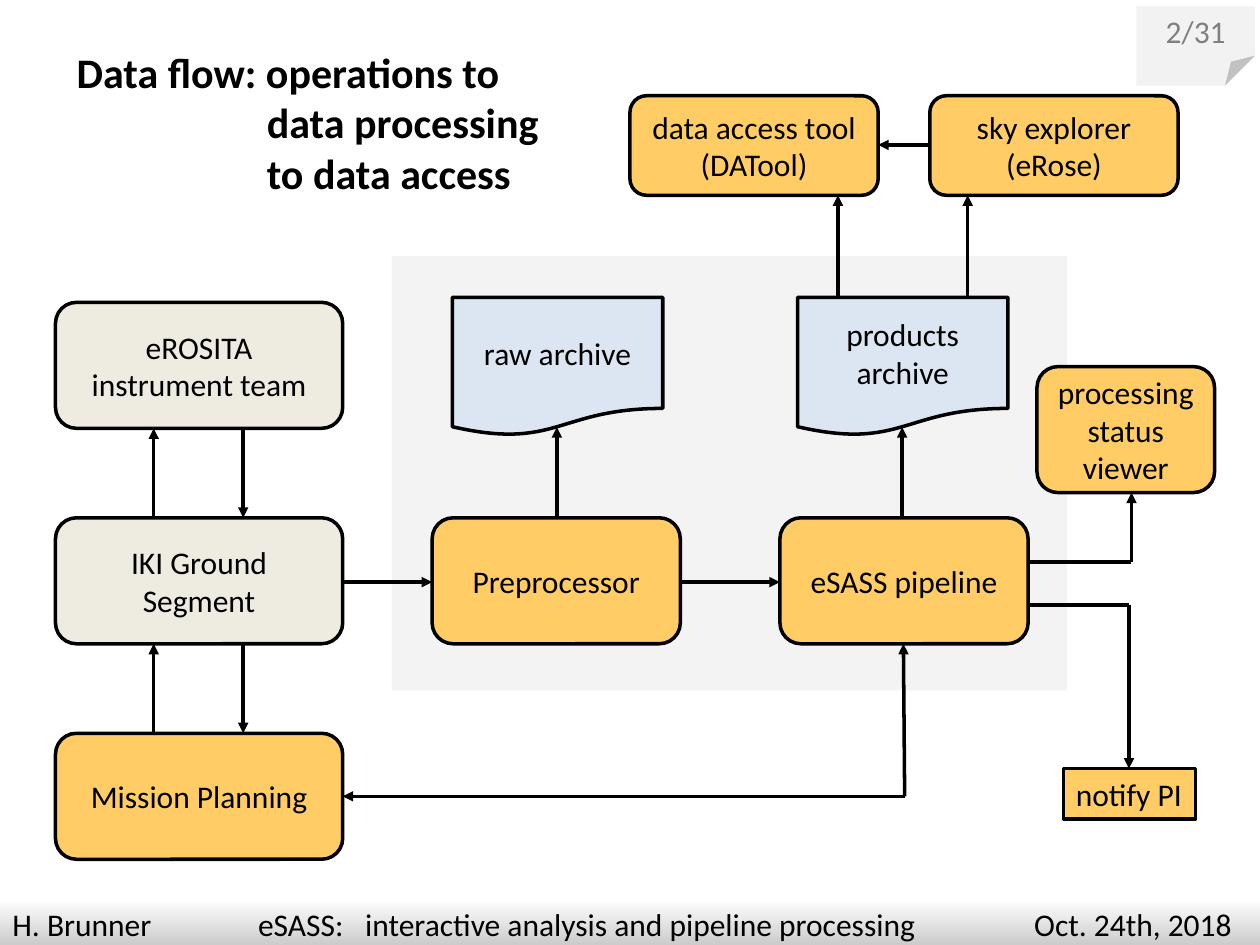
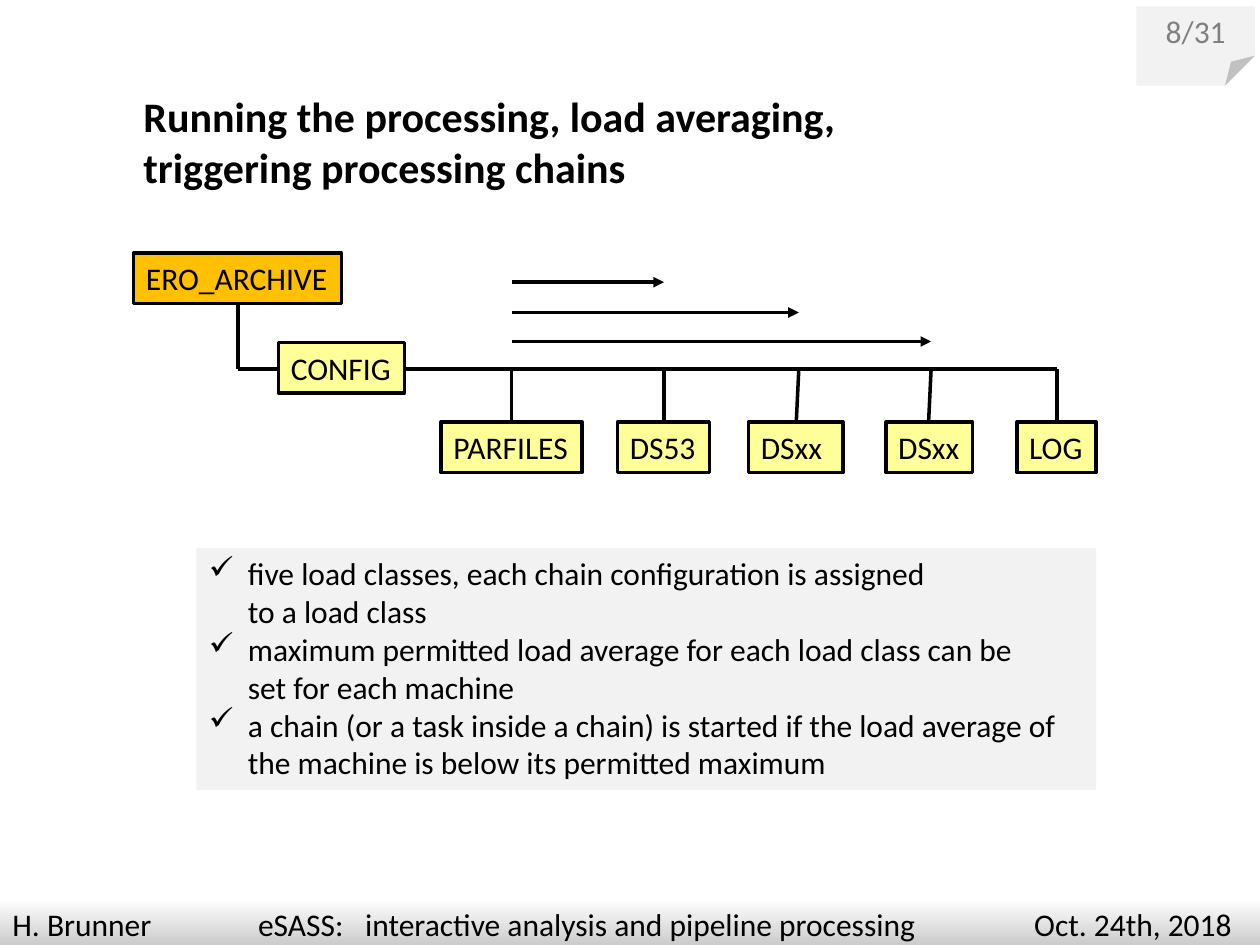
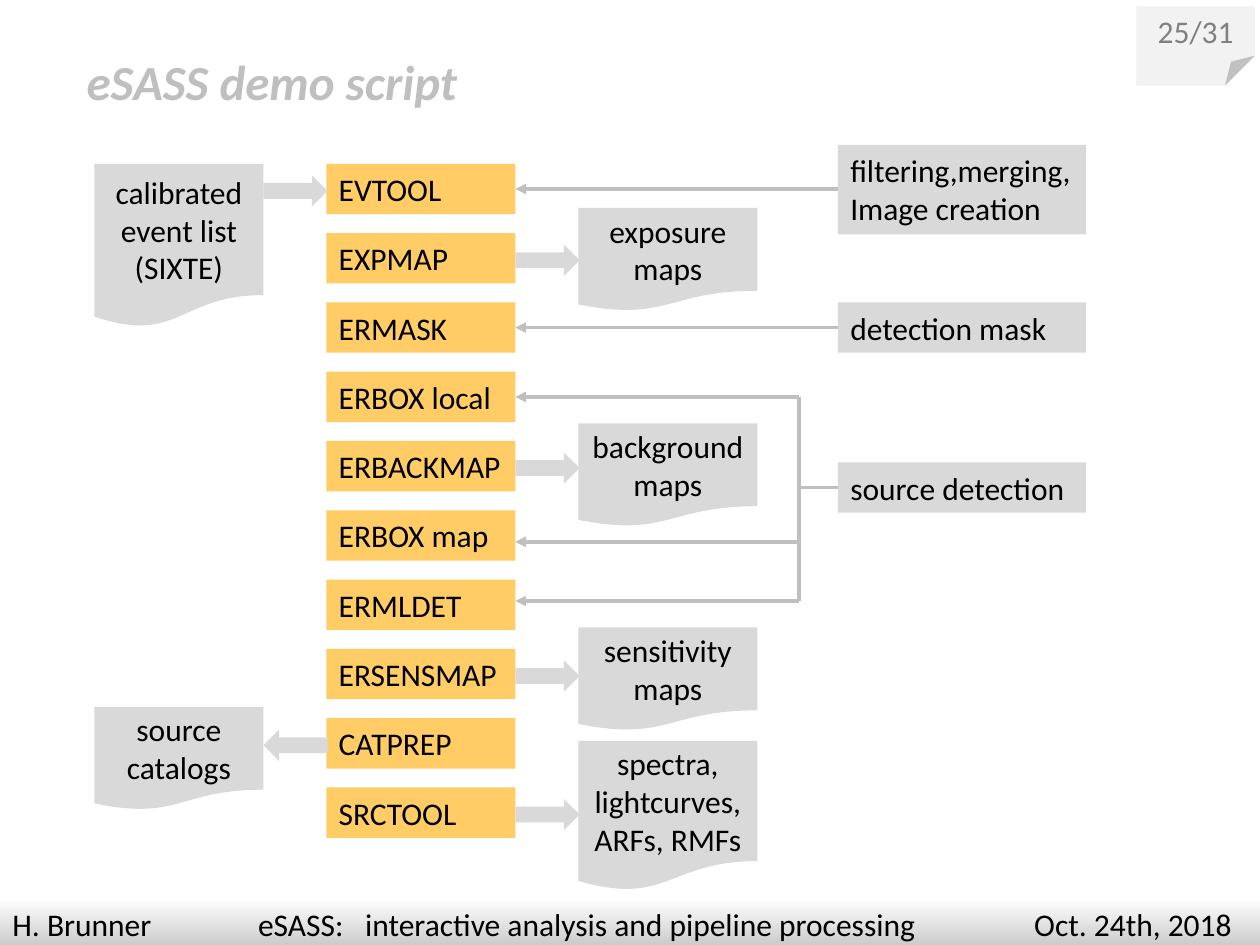
from itertools import pairwise

from lxml import etree
from pptx import Presentation
from pptx.dml.color import RGBColor
from pptx.enum.shapes import MSO_CONNECTOR, MSO_SHAPE
from pptx.enum.text import MSO_ANCHOR, MSO_AUTO_SIZE, PP_ALIGN
from pptx.oxml.ns import qn
from pptx.util import Inches, Pt

RECT = MSO_SHAPE.RECTANGLE
ROUNDED = MSO_SHAPE.ROUNDED_RECTANGLE
DOCUMENT = MSO_SHAPE.FLOWCHART_DOCUMENT
FOLDED = MSO_SHAPE.FOLDED_CORNER
RIGHT_ARROW = MSO_SHAPE.RIGHT_ARROW
LEFT_ARROW = MSO_SHAPE.LEFT_ARROW
STRAIGHT = MSO_CONNECTOR.STRAIGHT
TOP, MIDDLE = MSO_ANCHOR.TOP, MSO_ANCHOR.MIDDLE
LEFT, CENTER = PP_ALIGN.LEFT, PP_ALIGN.CENTER
FIT_SHAPE = MSO_AUTO_SIZE.SHAPE_TO_FIT_TEXT

FONT = "Calibri"
BLACK = "000000"
ORANGE = "FFCC66"
AMBER = "FFC000"
YELLOW = "FFFF99"
BEIGE = "EEECE1"
BLUE = "DCE6F2"
PALE = "F2F2F2"
LIGHT_GRAY = "D9D9D9"
GRAY = "BFBFBF"
PAGE_GRAY = "808080"
FOOTER_END = "CCCCCC"

LINE_WIDTH = Pt(2)
LABEL_HEIGHT = 0.4
FOOTER = "H. Brunner\teSASS:\tinteractive analysis and pipeline processing\tOct. 24th, 2018"
FOOTER_TABS = (1.95, 2.8, 8.11)


def rgb(color):
    return RGBColor.from_string(color)


def write(shape, text, align=LEFT, anchor=TOP, size=18, color=BLACK, bold=None, italic=None):
    """Put text into a shape, one paragraph per line."""
    frame = shape.text_frame
    frame.word_wrap = True
    frame.vertical_anchor = anchor
    frame.text = text
    for paragraph in frame.paragraphs:
        paragraph.alignment = align
        font = paragraph.font
        font.name, font.size, font.bold, font.italic = FONT, Pt(size), bold, italic
        font.color.rgb = rgb(color)
    return frame


def add_box(slide, kind, left, top, width, height, fill, outlined=False):
    shape = slide.shapes.add_shape(
        kind, Inches(left), Inches(top), Inches(width), Inches(height))
    shape.shadow.inherit = False
    shape.fill.solid()
    shape.fill.fore_color.rgb = rgb(fill)
    if outlined:
        shape.line.color.rgb = rgb(BLACK)
        shape.line.width = LINE_WIDTH
    else:
        shape.line.fill.background()
    return shape


def add_node(slide, kind, left, top, width, height, text, fill, outlined=True):
    """Add a box with centred text."""
    shape = add_box(slide, kind, left, top, width, height, fill, outlined)
    write(shape, text, CENTER, MIDDLE)


def add_label(slide, left, top, width, text, fill, outlined=False, height=LABEL_HEIGHT):
    """Add a rectangle with left-aligned text that does not wrap."""
    shape = add_box(slide, RECT, left, top, width, height, fill, outlined)
    frame = write(shape, text)
    frame.word_wrap = False
    frame.auto_size = FIT_SHAPE


def add_route(slide, *points, color=BLACK, arrow=True):
    """Join points by straight lines, with an arrowhead at the last point."""
    for start, end in pairwise(points):
        connector = slide.shapes.add_connector(
            STRAIGHT, *(Inches(value) for value in (*start, *end)))
        connector.line.color.rgb = rgb(color)
        connector.line.width = LINE_WIDTH
        properties = connector.element.spPr
        etree.SubElement(properties, qn("a:effectLst"))
        if arrow and end == points[-1]:
            etree.SubElement(properties.find(qn("a:ln")), qn("a:tailEnd"), type="triangle")


def add_title(slide, left, top, width, height, text, size=24, color=BLACK, italic=None):
    box = slide.shapes.add_textbox(
        Inches(left), Inches(top), Inches(width), Inches(height))
    frame = write(box, text, size=size, color=color, bold=True, italic=italic)
    frame.word_wrap = False
    return frame


def add_checklist(slide, left, top, width, height, items):
    panel = add_box(slide, RECT, left, top, width, height, PALE)
    for paragraph in write(panel, "\n".join(items)).paragraphs:
        properties = paragraph._p.get_or_add_pPr()
        properties.set("marL", str(Inches(0.31)))
        properties.set("indent", str(-Inches(0.31)))
        bullet = etree.Element(qn("a:buChar"), char="✓")
        properties.insert(0, bullet)


def add_page_mark(slide, number):
    mark = add_box(slide, FOLDED, 9.02, 0.05, 0.94, 0.63, PALE)
    geometry = mark.element.spPr.find(qn("a:prstGeom"))
    for child in list(geometry):
        geometry.remove(child)
    adjustments = etree.SubElement(geometry, qn("a:avLst"))
    etree.SubElement(adjustments, qn("a:gd"), name="adj", fmla="val 37700")
    write(mark, f"{number}/31", CENTER, MIDDLE, color=PAGE_GRAY)


def add_footer(slide):
    band = add_box(slide, RECT, 0, 7.13, 10, 0.37, FOOTER_END)
    band.fill.gradient()
    band.fill.gradient_angle = 270
    for stop, color in zip(band.fill.gradient_stops, ("FFFFFF", FOOTER_END)):
        stop.color.rgb = rgb(color)
    paragraph = write(band, FOOTER).paragraphs[0]
    tabs = etree.Element(qn("a:tabLst"))
    for position in FOOTER_TABS:
        etree.SubElement(tabs, qn("a:tab"), pos=str(Inches(position)), algn="l")
    paragraph._p.get_or_add_pPr().insert(0, tabs)


def add_slide(presentation, number):
    slide = presentation.slides.add_slide(presentation.slide_layouts[6])
    add_page_mark(slide, number)
    add_footer(slide)
    return slide


def build_data_flow(presentation):
    slide = add_slide(presentation, 2)
    panel = add_box(slide, RECT, 3.11, 2.03, 5.36, 3.45, PALE)
    panel_color = panel.element.spPr.find(qn("a:solidFill")).find(qn("a:srgbClr"))
    etree.SubElement(panel_color, qn("a:alpha"), val="85000")

    title = add_title(slide, 0.51, 0.32, 3.94, 1.31,
                      "Data flow: operations to\ndata processing\nto data access")
    for paragraph in title.paragraphs[1:]:
        paragraph._p.get_or_add_pPr().set("marL", str(Inches(1.51)))

    for top, text, fill in ((2.4, "eROSITA instrument team", BEIGE),
                            (4.11, "IKI Ground Segment", BEIGE),
                            (5.82, "Mission Planning", ORANGE)):
        add_node(slide, ROUNDED, 0.44, top, 2.28, 1, text, fill)
    for left, text in ((3.43, "Preprocessor"), (6.19, "eSASS pipeline")):
        add_node(slide, ROUNDED, left, 4.11, 1.97, 1, text, ORANGE)
    for left, text in ((3.59, "raw archive"), (6.33, "products archive")):
        add_node(slide, DOCUMENT, left, 2.36, 1.67, 1.1, text, BLUE)
    for left, text in ((5, "data access tool\n(DATool)"), (7.38, "sky explorer\n(eRose)")):
        add_node(slide, ROUNDED, left, 0.76, 1.97, 0.79, text, ORANGE)
    add_node(slide, ROUNDED, 8.23, 2.91, 1.41, 1, "processing status viewer", ORANGE)
    add_label(slide, 8.44, 6.1, 1.05, "notify PI", ORANGE, outlined=True)

    for upper, lower in ((3.4, 4.11), (5.11, 5.82)):
        add_route(slide, (1.22, lower), (1.22, upper))
        add_route(slide, (1.93, upper), (1.93, lower))
    for start, end in ((2.72, 3.43), (5.4, 6.19)):
        add_route(slide, (start, 4.62), (end, 4.62))
    for x in (4.42, 7.16):
        add_route(slide, (x, 4.11), (x, 3.39))
    for x in (6.65, 7.68):
        add_route(slide, (x, 2.36), (x, 1.55))
    add_route(slide, (7.38, 1.15), (6.97, 1.15))
    add_route(slide, (7.18, 6.32), (2.72, 6.32))
    add_route(slide, (7.18, 6.32), (7.17, 5.11))
    add_route(slide, (8.15, 4.8), (8.96, 4.8), (8.96, 6.1))
    add_route(slide, (8.15, 4.46), (8.98, 4.46), (8.98, 3.91))


def build_load_averaging(presentation):
    slide = add_slide(presentation, 8)
    add_title(slide, 1.04, 0.67, 5.82, 0.91,
              "Running the processing, load averaging,\ntriggering processing chains")

    bus = 2.93
    add_route(slide, (1.89, 2.41), (1.89, bus), (2.21, bus), arrow=False)
    add_route(slide, (3.22, bus), (8.39, bus), arrow=False)
    add_label(slide, 1.06, 2.01, 1.65, "ERO_ARCHIVE", AMBER, outlined=True)
    add_label(slide, 2.21, 2.72, 1, "CONFIG", YELLOW, outlined=True)
    directories = (
        (3.5, 1.12, "PARFILES", 4.06, 4.06),
        (4.9, 0.73, "DS53", 5.27, 5.27),
        (5.94, 0.75, "DSxx", 6.32, 6.34),
        (7.03, 0.69, "DSxx", 7.37, 7.39),
        (8.07, 0.63, "LOG", 8.39, 8.39),
    )
    for left, width, text, box_x, bus_x in directories:
        add_label(slide, left, 3.35, width, text, YELLOW, outlined=True)
        add_route(slide, (box_x, 3.35), (bus_x, bus), arrow=False)
    for y, end in ((2.24, 5.27), (2.48, 6.34), (2.71, 7.39)):
        add_route(slide, (4.06, y), (end, y))

    add_checklist(slide, 1.56, 4.35, 7.14, 1.92, (
        "five load classes, each chain configuration is assigned\vto a load class",
        "maximum permitted load average for each load class can be\vset for each machine",
        "a chain (or a task inside a chain) is started if the load average of"
        "\vthe machine is below its permitted maximum",
    ))


def build_demo_script(presentation):
    slide = add_slide(presentation, 25)
    add_title(slide, 0.59, 0.36, 3.17, 0.57, "eSASS demo script",
              size=28, color=GRAY, italic=True)

    tasks = ("EVTOOL", "EXPMAP", "ERMASK", "ERBOX local", "ERBACKMAP",
             "ERBOX map", "ERMLDET", "ERSENSMAP", "CATPREP", "SRCTOOL")
    task_tops = {task: 1.3 + 0.55 * row for row, task in enumerate(tasks)}
    for task, top in task_tops.items():
        add_label(slide, 2.59, top, 1.5, task, ORANGE)

    files = (
        (0.75, 1.3, 1.34, 1.3, "calibrated event list\n(SIXTE)"),
        (0.75, 5.61, 1.34, 0.82, "source catalogs"),
        (4.59, 1.65, 1.42, 0.82, "exposure maps"),
        (4.59, 3.36, 1.42, 0.82, "background maps"),
        (4.59, 4.98, 1.42, 0.82, "sensitivity maps"),
        (4.59, 5.88, 1.42, 1.19, "spectra, lightcurves, ARFs, RMFs"),
    )
    for left, top, width, height, text in files:
        add_node(slide, DOCUMENT, left, top, width, height, text, LIGHT_GRAY, outlined=False)

    block_arrows = (
        (RIGHT_ARROW, 2.09, "EVTOOL"),
        (LEFT_ARROW, 2.09, "CATPREP"),
        (RIGHT_ARROW, 4.09, "EXPMAP"),
        (RIGHT_ARROW, 4.09, "ERBACKMAP"),
        (RIGHT_ARROW, 4.09, "ERSENSMAP"),
        (RIGHT_ARROW, 4.09, "SRCTOOL"),
    )
    for kind, left, task in block_arrows:
        add_box(slide, kind, left, task_tops[task] + 0.09, 0.51, 0.25, LIGHT_GRAY)

    add_label(slide, 6.65, 1.15, 1.97, "filtering,merging,\nImage creation",
              LIGHT_GRAY, height=0.71)
    add_label(slide, 6.65, 2.4, 1.97, "detection mask", LIGHT_GRAY)
    add_label(slide, 6.65, 3.67, 1.97, "source detection", LIGHT_GRAY)

    for y in (1.5, 2.6):
        add_route(slide, (6.65, y), (4.09, y), color=GRAY)
    add_route(slide, (6.65, 3.87), (6.34, 3.87), color=GRAY, arrow=False)
    add_route(slide, (6.34, 3.15), (6.34, 4.77), color=GRAY, arrow=False)
    for y in (3.15, 4.3, 4.77):
        add_route(slide, (6.34, y), (4.09, y), color=GRAY)


def main():
    presentation = Presentation()
    presentation.slide_width = Inches(10)
    presentation.slide_height = Inches(7.5)
    build_data_flow(presentation)
    build_load_averaging(presentation)
    build_demo_script(presentation)
    presentation.save("out.pptx")


if __name__ == "__main__":
    main()
